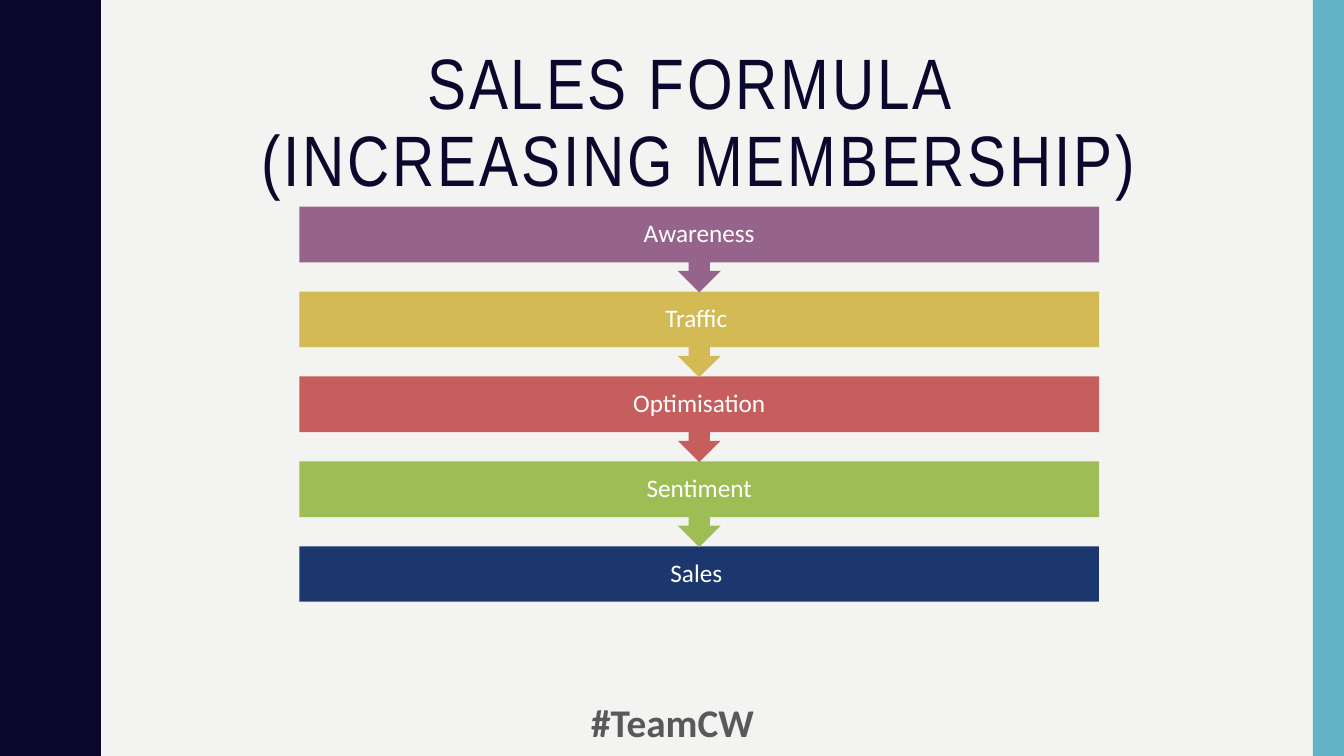
from pptx import Presentation
from pptx.dml.color import RGBColor
from pptx.enum import shapes, text
from pptx.util import Inches, Pt

NAVY = "0B082E"
STEPS = [
    ("Awareness", "96648A"),
    ("Traffic ", "D3BA55"),
    ("Optimisation", "C65E5E"),
    ("Sentiment", "9EBE55"),
    ("Sales ", "1B376E"),
]
STEP_LEFT, STEP_TOP, STEP_WIDTH = 2.97, 2.05, 7.93
STEP_PITCH, BAR_HEIGHT, CALLOUT_HEIGHT = 0.8425, 0.55, 0.85
WAVE_PERIOD = 1.5
WAVE_RISE = [
    (0.78, 0), (0.78, 0.07), (0.79, 0.14), (0.8, 0.2), (0.81, 0.25),
    (0.83, 0.29), (0.85, 0.33), (0.87, 0.38), (0.89, 0.42), (0.91, 0.46),
    (0.93, 0.5), (0.95, 0.55), (0.96, 0.61), (0.97, 0.68), (0.97, 0.75),
]


def color(value):
    return RGBColor.from_string(value)


def paint(shape, fill):
    shape.shadow.inherit = False
    shape.fill.solid()
    shape.fill.fore_color.rgb = color(fill)
    shape.line.fill.background()


def add_block(page, kind, left, top, width, height, fill):
    block = page.shapes.add_shape(
        kind, Inches(left), Inches(top), Inches(width), Inches(height))
    paint(block, fill)
    return block


def add_text(page, content, left, top, width, height, size, fill,
             font="Calibri", bold=False, line_spacing=0.9, inset=None, tracking=0):
    box = page.shapes.add_textbox(
        Inches(left), Inches(top), Inches(width), Inches(height))
    frame = box.text_frame
    frame.word_wrap = True
    frame.vertical_anchor = text.MSO_ANCHOR.MIDDLE
    if inset is not None:
        frame.margin_left = frame.margin_right = Inches(inset)
        frame.margin_top = frame.margin_bottom = Inches(inset)
    para = frame.paragraphs[0]
    para.text = content
    para.alignment = text.PP_ALIGN.CENTER
    para.line_spacing = line_spacing
    para.font.name = font
    para.font.size = Pt(size)
    para.font.bold = bold
    para.font.color.rgb = color(fill)
    if tracking:
        for span in para.runs:
            span._r.get_or_add_rPr().set("spc", str(tracking * 100))


def add_wave(page, height):
    fall = [(x, WAVE_PERIOD - y) for x, y in reversed(WAVE_RISE[1:-1])]
    cycle = WAVE_RISE + fall
    edge = [(x, y + WAVE_PERIOD * turn)
            for turn in range(round(height / WAVE_PERIOD)) for x, y in cycle]
    edge += [(WAVE_RISE[0][0], height), (0, height)]
    builder = page.shapes.build_freeform(0, 0, scale=Inches(1))
    builder.add_line_segments(edge, close=True)
    paint(builder.convert_to_shape(), NAVY)


def add_step(page, index, label, fill):
    top = STEP_TOP + index * STEP_PITCH
    if index == len(STEPS) - 1:
        add_block(page, shapes.MSO_SHAPE.RECTANGLE,
                  STEP_LEFT, top, STEP_WIDTH, BAR_HEIGHT, fill)
    else:
        callout = add_block(page, shapes.MSO_SHAPE.UP_ARROW_CALLOUT,
                            STEP_LEFT, top, STEP_WIDTH, CALLOUT_HEIGHT, fill)
        callout.rotation = 180
    add_text(page, label, STEP_LEFT, top, STEP_WIDTH, BAR_HEIGHT,
             18, "FFFFFF", inset=0.14)


def main():
    deck = Presentation()
    deck.slide_width, deck.slide_height = Inches(13.33), Inches(7.5)
    page = deck.slides.add_slide(deck.slide_layouts[6])
    page.background.fill.solid()
    page.background.fill.fore_color.rgb = color("F3F3F2")
    add_wave(page, 7.5)
    add_block(page, shapes.MSO_SHAPE.RECTANGLE, 13.02, 0, 0.31, 7.5, "62B4C6")
    add_text(page, "SALES FORMULA \v(INCREASING MEMBERSHIP)", 1.37, 0.42, 11.13, 1.63,
             51, NAVY, font="Arial Narrow", tracking=2)
    for index, (label, fill) in reversed(list(enumerate(STEPS))):
        add_step(page, index, label, fill)
    add_text(page, "#TeamCW", 4.42, 6.97, 4.5, 0.38, 28, "595959",
             bold=True, line_spacing=1.0)
    deck.save("out.pptx")


if __name__ == "__main__":
    main()
